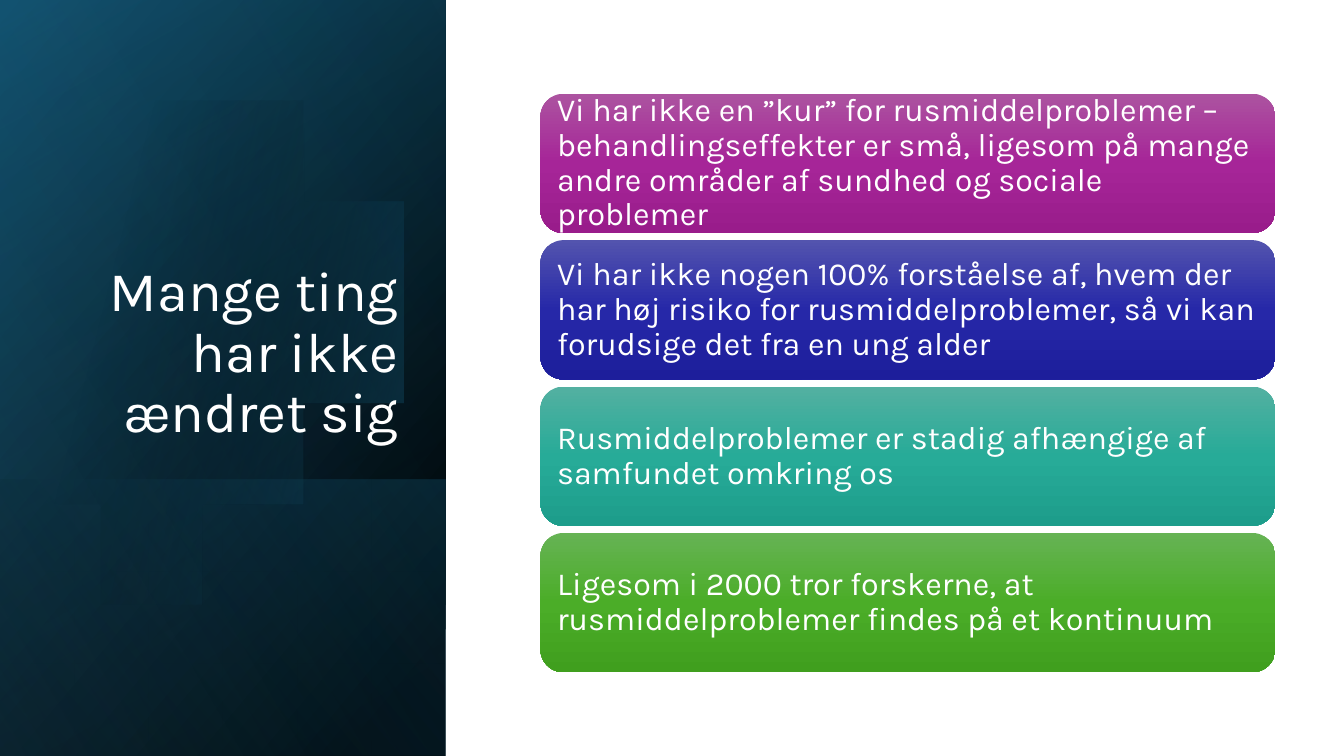
import math
from dataclasses import dataclass

import lxml.etree
import pptx
import pptx.dml.color
import pptx.enum.shapes
import pptx.enum.text
import pptx.oxml
import pptx.oxml.ns
import pptx.util

Inches = pptx.util.Inches
SHAPES = pptx.enum.shapes.MSO_SHAPE
ALIGN = pptx.enum.text.PP_ALIGN
ANCHOR = pptx.enum.text.MSO_ANCHOR


@dataclass(frozen=True)
class Theme:
    font: str = "Karla"
    text: str = "FFFFFF"
    title_size: int = 40
    body_size: int = 23
    black: str = "000000"
    deep_teal: str = "104862"
    teal: str = "156082"
    sky: str = "46B1E1"
    purple: tuple = ("AC53A0", "A62598", "991C8B")
    blue: tuple = ("5354AE", "2628A8", "1D1E9B")
    green_teal: tuple = ("53B0A1", "27AB98", "1D9D8B")
    green: tuple = ("66B354", "4BAD28", "409F1E")


THEME = Theme()

STATEMENTS = [
    ("Vi har ikke en ”kur” for rusmiddelproblemer – behandlingseffekter er små, "
     "ligesom på mange andre områder af sundhed og sociale problemer", THEME.purple),
    ("Vi har ikke nogen 100% forståelse af, hvem der har høj risiko for "
     "rusmiddelproblemer, så vi kan forudsige det fra en ung alder", THEME.blue),
    ("Rusmiddelproblemer er stadig afhængige af samfundet omkring os", THEME.green_teal),
    ("Ligesom i 2000 tror forskerne, at rusmiddelproblemer findes på et kontinuum",
     THEME.green),
]


def fill_gradient(shape, stops, angle):
    """Fill with (position %, colour, opacity %) stops; the angle runs clockwise."""
    shape.shadow.inherit = False
    shape.line.fill.background()
    shape.fill.gradient()
    gradient = shape._element.spPr.find(pptx.oxml.ns.qn("a:gradFill"))
    stop_xml = "".join(
        f'<a:gs pos="{position * 1000}"><a:srgbClr val="{colour}">'
        f'<a:alpha val="{opacity * 1000}"/></a:srgbClr></a:gs>'
        for position, colour, opacity in stops)
    replacement = pptx.oxml.parse_xml(
        f'<a:gradFill {pptx.oxml.ns.nsdecls("a")} rotWithShape="1">'
        f'<a:gsLst>{stop_xml}</a:gsLst>'
        f'<a:lin ang="{angle * 60000}" scaled="0"/></a:gradFill>')
    gradient.getparent().replace(gradient, replacement)


def write_text(shape, text, *, size, align=ALIGN.LEFT, anchor=ANCHOR.MIDDLE,
               inset_x=0.1, inset_y=0.1):
    frame = shape.text_frame
    frame.word_wrap = True
    frame.vertical_anchor = anchor
    frame.margin_left = frame.margin_right = Inches(inset_x)
    frame.margin_top = frame.margin_bottom = Inches(inset_y)
    paragraph = frame.paragraphs[0]
    paragraph.alignment = align
    paragraph.line_spacing = 0.9
    run = paragraph.add_run()
    run.text = text
    run.font.name = THEME.font
    run.font.size = pptx.util.Pt(size)
    run.font.color.rgb = pptx.dml.color.RGBColor.from_string(THEME.text)


def add_turned_panel(slide, left, top, width, height, stops, angle):
    """Cover the given box with a mirrored rectangle turned a quarter."""
    panel = slide.shapes.add_shape(
        SHAPES.RECTANGLE,
        Inches(left + (width - height) / 2), Inches(top + (height - width) / 2),
        Inches(height), Inches(width))
    panel.rotation = 90
    panel._element.spPr.find(pptx.oxml.ns.qn("a:xfrm")).set("flipH", "1")
    fill_gradient(panel, stops, angle)


def add_cut_disc(slide, center_x, center_y, radius, cut_x):
    """Draw a disc whose left side is cut off upright at cut_x."""
    limit = math.acos((cut_x - center_x) / radius)
    steps = 90
    angles = [limit * (2 * step / steps - 1) for step in range(steps + 1)]
    points = [(center_x + radius * math.cos(a), center_y + radius * math.sin(a))
              for a in angles]
    builder = slide.shapes.build_freeform(*points[0], scale=Inches(1))
    builder.add_line_segments(points[1:], close=True)
    fill_gradient(builder.convert_to_shape(),
                  [(29, THEME.black, 0), (100, THEME.teal, 43)], 14)


def add_title_panel(slide, left, top, width, height):
    add_turned_panel(slide, left, top, width, height,
                     [(8, THEME.black, 100), (100, THEME.deep_teal, 100)], 50)
    add_turned_panel(slide, left, top, width, height,
                     [(0, THEME.black, 0), (99, THEME.teal, 46)], 30)
    foot = 2.74
    add_turned_panel(slide, left, top + height - foot, width, foot,
                     [(2, THEME.teal, 29), (100, THEME.black, 30)], 130)
    add_cut_disc(slide, left + 1.45, top + 3.37, 2.28, left - 0.15)
    add_turned_panel(slide, left, top, width, height,
                     [(0, THEME.black, 0), (99, THEME.sky, 11)], 120)
    title = slide.shapes.add_textbox(Inches(left + 0.64), Inches(top + 1.84),
                                     Inches(3.41), Inches(2.62))
    write_text(title, "Mange ting har ikke ændret sig", size=THEME.title_size,
               align=ALIGN.RIGHT, anchor=ANCHOR.BOTTOM, inset_y=0.05)


def add_statements(slide, left, top, width, height):
    gap = 0.07
    card_height = (height - gap * (len(STATEMENTS) - 1)) / len(STATEMENTS)
    for index, (statement, colours) in enumerate(STATEMENTS):
        card = slide.shapes.add_shape(
            SHAPES.ROUNDED_RECTANGLE, Inches(left),
            Inches(top + index * (card_height + gap)),
            Inches(width), Inches(card_height))
        fill_gradient(card, [(position, colour, 100) for position, colour
                             in zip((0, 50, 100), colours)], 90)
        write_text(card, statement, size=THEME.body_size)


def main():
    presentation = pptx.Presentation()
    presentation.slide_width = Inches(13.33)
    presentation.slide_height = Inches(7.5)
    slide = presentation.slides.add_slide(presentation.slide_layouts[6])
    add_title_panel(slide, 0, 0, 4.42, 7.5)
    add_statements(slide, 5.36, 0.93, 7.29, 5.74)
    presentation.save("out.pptx")


if __name__ == "__main__":
    main()
